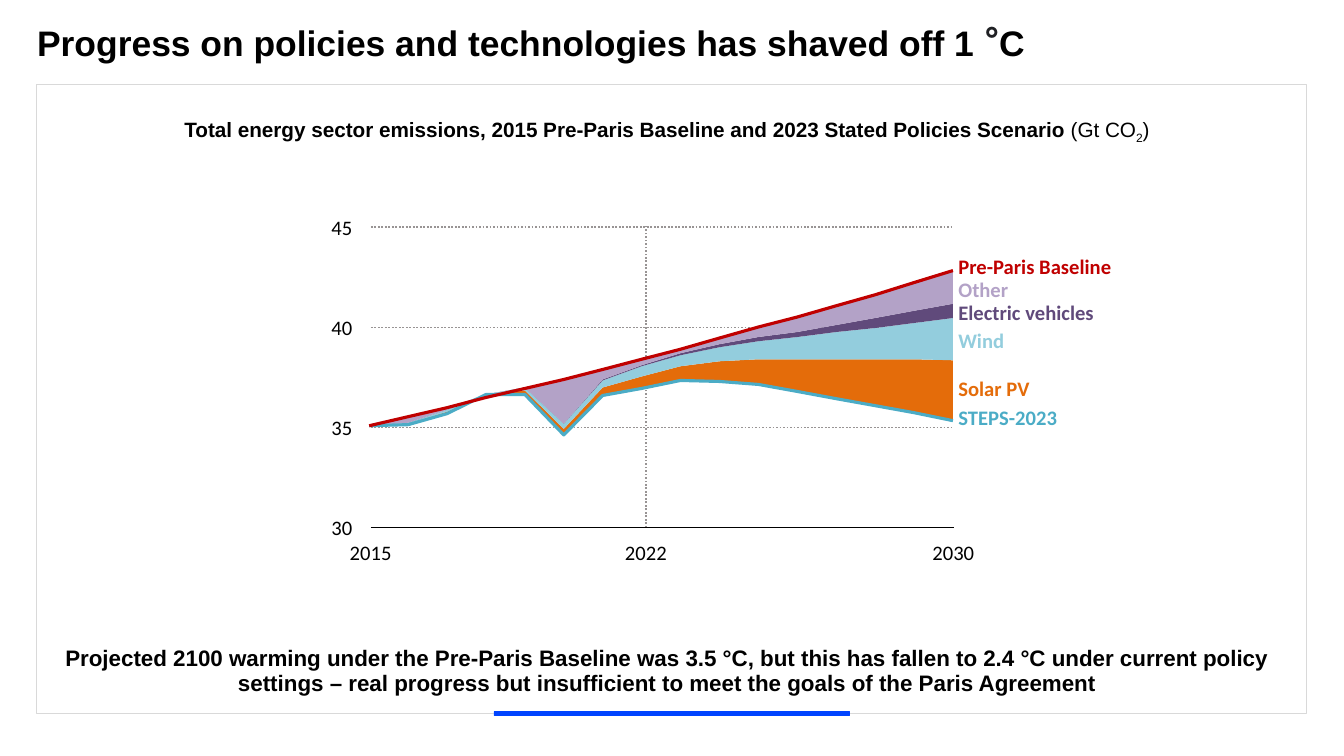
"""Build the slide on emissions avoided since the Pre-Paris Baseline."""
from typing import NamedTuple, Optional

from lxml import etree
from pptx import Presentation
from pptx.dml.color import RGBColor
from pptx.enum import dml, shapes, text
from pptx.oxml.ns import qn
from pptx.util import Pt

BLACK = RGBColor(0x00, 0x00, 0x00)
INK = RGBColor(0x20, 0x21, 0x24)
FRAME = RGBColor(0xD9, 0xD9, 0xD9)
ACCENT = RGBColor(0x00, 0x44, 0xFF)
GRID = RGBColor(0x98, 0x94, 0x94)
RED = RGBColor(0xC0, 0x00, 0x00)
LILAC = RGBColor(0xB3, 0xA2, 0xC7)
PURPLE = RGBColor(0x60, 0x4A, 0x7B)
SKY = RGBColor(0x93, 0xCD, 0xDD)
ORANGE = RGBColor(0xE4, 0x6C, 0x0A)
TEAL = RGBColor(0x4B, 0xAC, 0xC6)

PLOT_LEFT, YEAR_STEP = 263.7, 27.8
AXIS_Y, AXIS_MIN, GT_HEIGHT = 376.9, 30, 14.3
GRID_LEFT, GRID_RIGHT, MARK_X = 265, 681.5, 461.5
LABEL_SIZE, LABEL_HEIGHT, LABEL_LEFT = 14.7, 18, 684.5


class Run(NamedTuple):
    text: str
    size: float
    bold: bool = True
    font: str = "Arial"
    color: RGBColor = BLACK
    baseline: int = 0


class Series(NamedTuple):
    name: str
    color: RGBColor
    label_top: float
    label_width: float
    gt: tuple[float, ...]


STEPS = Series("STEPS-2023", TEAL, 289.4, 72, (
    35.09, 35.14, 35.69, 36.65, 36.65, 34.63, 36.6, 36.95,
    37.35, 37.3, 37.15, 36.8, 36.44, 36.09, 35.74, 35.34))
BASELINE = Series("Pre-Paris Baseline", RED, 181.4, 112, (
    35.09, 35.54, 35.99, 36.5, 36.95, 37.4, 37.9, 38.41,
    38.91, 39.47, 40.02, 40.52, 41.08, 41.63, 42.24, 42.84))
SOLAR = Series("Solar PV", ORANGE, 268.6, 53, (
    35.09, 35.19, 35.79, 36.65, 36.85, 34.93, 37.0, 37.55,
    38.06, 38.31, 38.41, 38.41, 38.41, 38.41, 38.41, 38.36))
WIND = Series("Wind", SKY, 234, 35, (
    35.09, 35.24, 35.89, 36.65, 37.0, 35.19, 37.35, 38.06,
    38.61, 39.01, 39.31, 39.52, 39.77, 39.97, 40.22, 40.47))
VEHICLES = Series("Electric vehicles", PURPLE, 214.3, 99, (
    35.09, 35.24, 35.89, 36.65, 37.0, 35.19, 37.4, 38.11,
    38.71, 39.16, 39.52, 39.77, 40.12, 40.47, 40.83, 41.18))
OTHER = Series("Other", LILAC, 198, 38, tuple(
    max(pair) for pair in zip(BASELINE.gt, VEHICLES.gt)))


def gt_y(gt: float) -> float:
    """Return the height on the slide of an emission level."""
    return AXIS_Y - (gt - AXIS_MIN) * GT_HEIGHT


def add_rect(s, box: tuple, line: RGBColor, width: float, fill: Optional[RGBColor] = None) -> None:
    """Draw a rectangle."""
    sp = s.shapes.add_shape(shapes.MSO_SHAPE.RECTANGLE, *map(Pt, box))
    sp.shadow.inherit = False
    sp.line.color.rgb, sp.line.width = line, Pt(width)
    if fill is None:
        sp.fill.background()
    else:
        sp.fill.solid()
        sp.fill.fore_color.rgb = fill


def add_line(s, ends: tuple, color: RGBColor, width: float, dotted: bool = False) -> None:
    """Draw a straight line."""
    sp = s.shapes.add_connector(shapes.MSO_CONNECTOR.STRAIGHT, *map(Pt, ends))
    sp.line.color.rgb, sp.line.width = color, Pt(width)
    if dotted:
        sp.line.dash_style = dml.MSO_LINE.ROUND_DOT
    etree.SubElement(sp._element.spPr, qn("a:effectLst"))


def curve_points(series: Series) -> list[tuple]:
    """Return the slide positions of a series."""
    return [(Pt(PLOT_LEFT + i * YEAR_STEP), Pt(gt_y(gt))) for i, gt in enumerate(series.gt)]


def add_curve(s, upper: Series, lower: Optional[Series] = None) -> None:
    """Draw a series as a line, or as a band above a lower series."""
    start, *rest = curve_points(upper)
    if lower:
        rest += reversed(curve_points(lower))
    builder = s.shapes.build_freeform(*start)
    builder.add_line_segments(rest, close=lower is not None)
    sp = builder.convert_to_shape()
    sp.shadow.inherit = False
    if lower:
        sp.fill.solid()
        sp.fill.fore_color.rgb = upper.color
        sp.line.fill.background()
    else:
        sp.fill.background()
        sp.line.color.rgb, sp.line.width = upper.color, Pt(2.25)


def write(sp, runs: list[Run], margins: tuple = (0, 0, 0, 0), spacing: float = 1.0,
          align=text.PP_ALIGN.LEFT, anchor=text.MSO_ANCHOR.TOP, wrap: bool = True) -> None:
    """Fill a shape with one formatted paragraph."""
    tf = sp.text_frame
    tf.margin_left, tf.margin_top, tf.margin_right, tf.margin_bottom = map(Pt, margins)
    tf.word_wrap, tf.vertical_anchor = wrap, anchor
    tf.auto_size = text.MSO_AUTO_SIZE.NONE
    p = tf.paragraphs[0]
    p.alignment, p.line_spacing = align, spacing
    for run in runs:
        r = p.add_run()
        r.text = run.text
        font = p.font if len(runs) == 1 else r.font
        font.size, font.bold, font.name = Pt(run.size), run.bold, run.font
        font.color.rgb = run.color
        if run.baseline:
            r._r.get_or_add_rPr().set("baseline", str(run.baseline))


def add_label(s, content: str, left: float, top: float, width: float,
              color: RGBColor = BLACK, bold: bool = False) -> None:
    """Write a chart label."""
    sp = s.shapes.add_textbox(Pt(left), Pt(top), Pt(width), Pt(LABEL_HEIGHT))
    write(sp, [Run(content, LABEL_SIZE, bold, "Calibri", color)])


def add_chart_drawing(s) -> None:
    """Draw the emission bands with their axes and labels."""
    add_line(s, (MARK_X, AXIS_Y, MARK_X, 160), GRID, 1.25, dotted=True)
    for gt in (35, 40, 45):
        add_line(s, (GRID_LEFT, gt_y(gt), GRID_RIGHT, gt_y(gt)), GRID, 1.25, dotted=True)
    stack = [STEPS, SOLAR, WIND, VEHICLES, OTHER]
    for lower, upper in zip(stack, stack[1:]):
        add_curve(s, upper, lower)
    add_line(s, (GRID_LEFT, AXIS_Y, GRID_RIGHT, AXIS_Y), BLACK, 0.25)
    for series in (STEPS, BASELINE):
        add_curve(s, series)
    for gt in (30, 35, 40, 45):
        add_label(s, str(gt), 236.7, gt_y(gt) - 9.2, 18)
    for year, left in ((2015, 249.8), (2022, 446.4), (2030, 666)):
        add_label(s, str(year), left, 386, 34)
    for series in [BASELINE, *stack]:
        add_label(s, series.name, LABEL_LEFT, series.label_top, series.label_width,
                  series.color, bold=True)


def main() -> None:
    """Build and save the slide."""
    prs = Presentation()
    prs.slide_width, prs.slide_height = Pt(960), Pt(540)
    s = prs.slides.add_slide(prs.slide_layouts[5])

    add_rect(s, (26.3, 60.5, 907.2, 449.3), FRAME, 0.75)
    add_rect(s, (352.8, 508.3, 254.2, 2.9), ACCENT, 0.5, ACCENT)

    title = s.shapes.title
    title.left, title.top, title.width, title.height = map(Pt, (26.5, 17.3, 839.5, 41))
    write(title, [
        Run("Progress on policies and technologies has shaved off 1 ", 25.3),
        Run("°", 26.7, font="Karla", color=INK),
        Run("C", 25.3)], spacing=0.9)

    centred = {"align": text.PP_ALIGN.CENTER, "anchor": text.MSO_ANCHOR.MIDDLE}
    takeaway = s.shapes.add_textbox(*map(Pt, (26.5, 460, 907.2, 45.4)))
    write(takeaway, [Run(
        "Projected 2100 warming under the Pre-Paris Baseline was 3.5 °C, but this has fallen "
        "to 2.4 °C under current policy settings – real progress but insufficient to meet "
        "the goals of the Paris Agreement", 16)], (0, 0, 7.2, 5.8), 0.9, **centred)
    heading = s.shapes.add_textbox(*map(Pt, (123, 82.1, 714, 22.3)))
    write(heading, [
        Run("Total energy sector emissions, 2015 Pre-Paris Baseline and 2023 "
            "Stated Policies Scenario ", 14.8),
        Run("(Gt CO", 14.8, bold=False),
        Run("2", 14.8, bold=False, baseline=-25000),
        Run(")", 14.8, bold=False)], (0, 3.6, 7.2, 3.6), 0.8, **centred)

    add_chart_drawing(s)
    prs.save("out.pptx")


if __name__ == "__main__":
    main()
